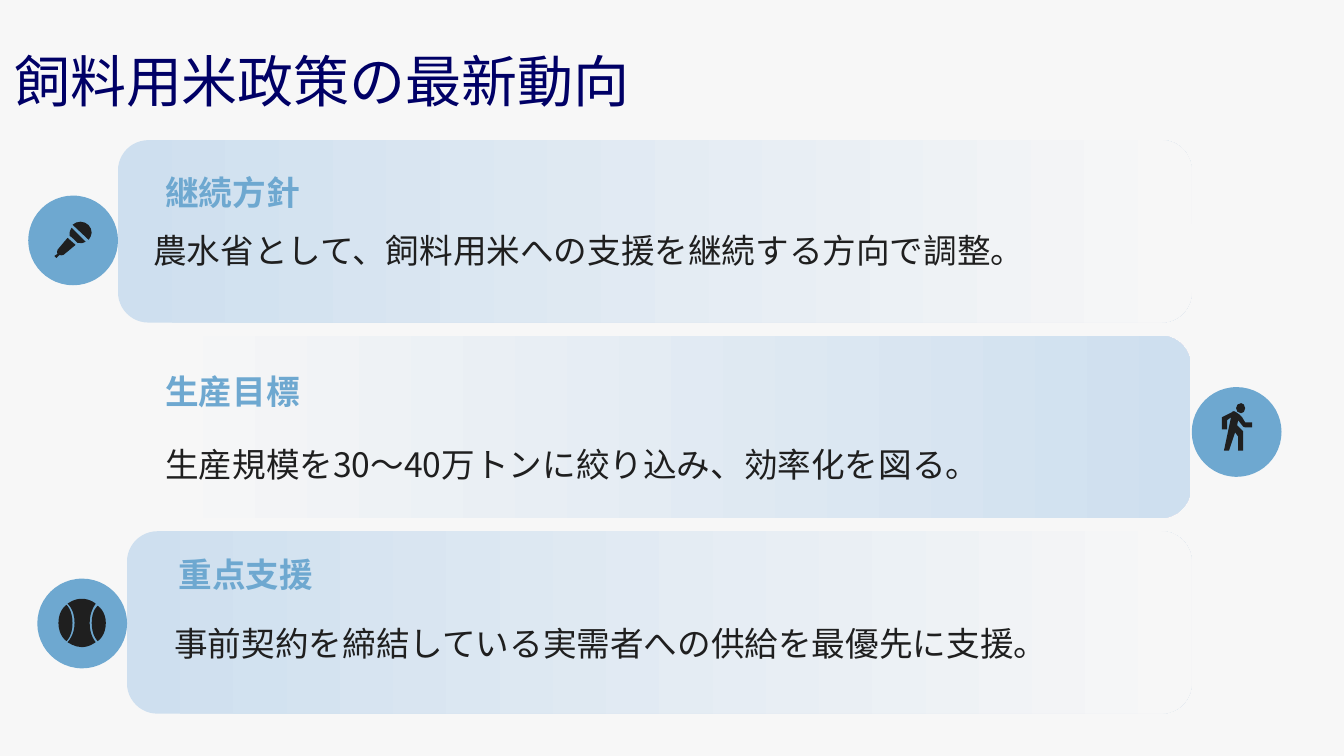
from lxml.etree import SubElement
from pptx import Presentation
from pptx.dml.color import RGBColor
from pptx.enum.shapes import MSO_SHAPE
from pptx.enum.text import MSO_ANCHOR
from pptx.oxml.ns import qn

PX = 9144
FONT = "Noto Sans CJK JP"
COLORS = {
    "page": "F7F7F7",
    "panel": "CEDFEF",
    "accent": "6EA8D0",
    "title": "000066",
    "ink": "1F1F1F",
}
DISC = 89
PANEL_HEIGHT = 181

BALL = [
    [(89, 618), (89, 606, 95, 599, 95, 599), (95, 599, 90, 594, 81, 594),
     (73, 594, 67, 599, 67, 599), (67, 599, 74, 604, 74, 618),
     (74, 631, 67, 637, 67, 637), (67, 637, 74, 642, 81, 642),
     (89, 642, 95, 637, 95, 637), (95, 637, 89, 631, 89, 618)],
    [(66, 600), (66, 600, 58, 605, 58, 618), (58, 631, 66, 636, 66, 636),
     (66, 636, 72, 631, 72, 618), (72, 605, 66, 600, 66, 600)],
    [(97, 601), (97, 601, 91, 605, 91, 618), (91, 631, 97, 636, 97, 636),
     (97, 636, 105, 631, 105, 618), (105, 606, 97, 601, 97, 601)],
]
MICROPHONE = [
    [(69, 234), (69, 231, 69, 228, 71, 226), (71, 226, 85, 240, 85, 240),
     (83, 241, 80, 242, 77, 241), (77, 241, 70, 234, 69, 234)],
    [(72, 223), (74, 221, 77, 220, 80, 220), (86, 220, 91, 225, 91, 231),
     (91, 234, 89, 236, 88, 238), (88, 238, 72, 223, 72, 223)],
    [(57, 252), (57, 252, 56, 249, 57, 248), (57, 248, 67, 236, 67, 236),
     (75, 243), (63, 253), (62, 254, 59, 253, 59, 253), (56, 256), (54, 254),
     (57, 252)],
]
WALKER = [
    [(1228, 417), (1232, 422), (1232, 423, 1234, 424, 1235, 424), (1242, 424),
     (1242, 419), (1235, 419), (1232, 414), (1231, 413, 1230, 412, 1229, 411),
     (1226, 409), (1225, 408, 1224, 408, 1224, 408),
     (1223, 408, 1222, 408, 1222, 409), (1212, 414), (1212, 426), (1217, 426),
     (1217, 417), (1221, 414), (1214, 447), (1219, 447), (1225, 429),
     (1228, 433), (1228, 447), (1233, 447), (1233, 428), (1227, 422),
     (1228, 417)],
    [(1231, 410), (1233, 410, 1235, 408, 1235, 405),
     (1235, 402, 1233, 400, 1231, 400), (1228, 400, 1226, 402, 1226, 405),
     (1226, 408, 1228, 410, 1231, 410)],
]


def color(name):
    return RGBColor.from_string(COLORS[name])


def add_preset(page, kind, left, top, width, height):
    shape = page.shapes.add_shape(kind, *(n * PX for n in (left, top, width, height)))
    shape.shadow.inherit = False
    shape.line.fill.background()
    return shape


def add_panel(page, left, top, width, start, end):
    panel = add_preset(page, MSO_SHAPE.ROUNDED_RECTANGLE, left, top, width, PANEL_HEIGHT)
    panel.fill.gradient()
    panel.fill.gradient_angle = 0
    for stop, name in zip(panel.fill.gradient_stops, (start, end)):
        stop.color.rgb = color(name)


def add_disc(page, left, top):
    disc = add_preset(page, MSO_SHAPE.OVAL, left, top, DISC, DISC)
    disc.fill.solid()
    disc.fill.fore_color.rgb = color("accent")


def bend_line(line, curve, left, top):
    line.tag = qn("a:cubicBezTo")
    line.remove(line[0])
    for x, y in zip(curve[::2], curve[1::2]):
        point = SubElement(line, qn("a:pt"))
        point.set("x", str(x * PX - left))
        point.set("y", str(y * PX - top))


def add_icon(page, contours):
    builder = page.shapes.build_freeform(*contours[0][0], scale=PX)
    for index, (start, *segments) in enumerate(contours):
        if index:
            builder.move_to(*start)
        builder.add_line_segments([segment[-2:] for segment in segments], close=True)
    icon = builder.convert_to_shape()
    lines = list(icon._element.iter(qn("a:lnTo")))
    for point in icon._element.iter(qn("a:pt")):
        point.set("x", str(int(point.get("x")) * PX))
        point.set("y", str(int(point.get("y")) * PX))
    for outline in icon._element.iter(qn("a:path")):
        outline.set("w", str(icon.width))
        outline.set("h", str(icon.height))
    segments = [segment for contour in contours for segment in contour[1:]]
    for line, segment in zip(lines, segments):
        if len(segment) == 6:
            bend_line(line, segment, icon.left, icon.top)
    icon.shadow.inherit = False
    icon.fill.solid()
    icon.fill.fore_color.rgb = color("ink")
    icon.line.fill.background()


def add_text(page, place, text, size, ink, spacing, anchor, insets=(12, 6, 12, 6), bold=False):
    box = page.shapes.add_textbox(*(n * PX for n in place))
    frame = box.text_frame
    frame.word_wrap = True
    frame.vertical_anchor = anchor
    (frame.margin_left, frame.margin_top,
     frame.margin_right, frame.margin_bottom) = (n * PX for n in insets)
    para = frame.paragraphs[0]
    para.text = text
    para.line_spacing = spacing
    font = para.font
    font.size = size * 12700
    font.bold = bold
    font.color.rgb = color(ink)
    font.name = FONT
    properties = para._p.pPr.find(qn("a:defRPr"))
    SubElement(properties, qn("a:ea")).set("typeface", FONT)


def add_heading(page, left, top, width, text):
    add_text(page, (left, top, width, 62), text, 24, "accent", 1.2,
             MSO_ANCHOR.MIDDLE, bold=True)


def add_body(page, left, top, width, text):
    add_text(page, (left, top, width, 85), text, 24, "ink", 1.4, MSO_ANCHOR.TOP)


def main():
    deck = Presentation()
    deck.slide_width, deck.slide_height = 1333 * PX, 750 * PX
    page = deck.slides.add_slide(deck.slide_layouts[6])
    page.background.fill.solid()
    page.background.fill.fore_color.rgb = color("page")

    add_panel(page, 150, 333, 1031, "page", "panel")
    add_panel(page, 126, 527, 1056, "panel", "page")
    add_panel(page, 117, 139, 1065, "panel", "page")

    for left, top, icon in ((37, 574, BALL), (1182, 384, WALKER), (28, 194, MICROPHONE)):
        add_disc(page, left, top)
        add_icon(page, icon)

    add_text(page, (0, 16, 1333, 100), "飼料用米政策の最新動向", 40, "title", 1.4,
             MSO_ANCHOR.MIDDLE, insets=(14, 14, 6, 14))
    add_heading(page, 152, 156, 962, "継続方針")
    add_body(page, 140, 206, 974, "農水省として、飼料用米への支援を継続する方向で調整。")
    add_heading(page, 152, 353, 956, "生産目標")
    add_body(page, 152, 418, 897, "生産規模を30～40万トンに絞り込み、効率化を図る。")
    add_heading(page, 165, 534, 943, "重点支援")
    add_body(page, 161, 596, 943, "事前契約を締結している実需者への供給を最優先に支援。")

    deck.save("out.pptx")


if __name__ == "__main__":
    main()
